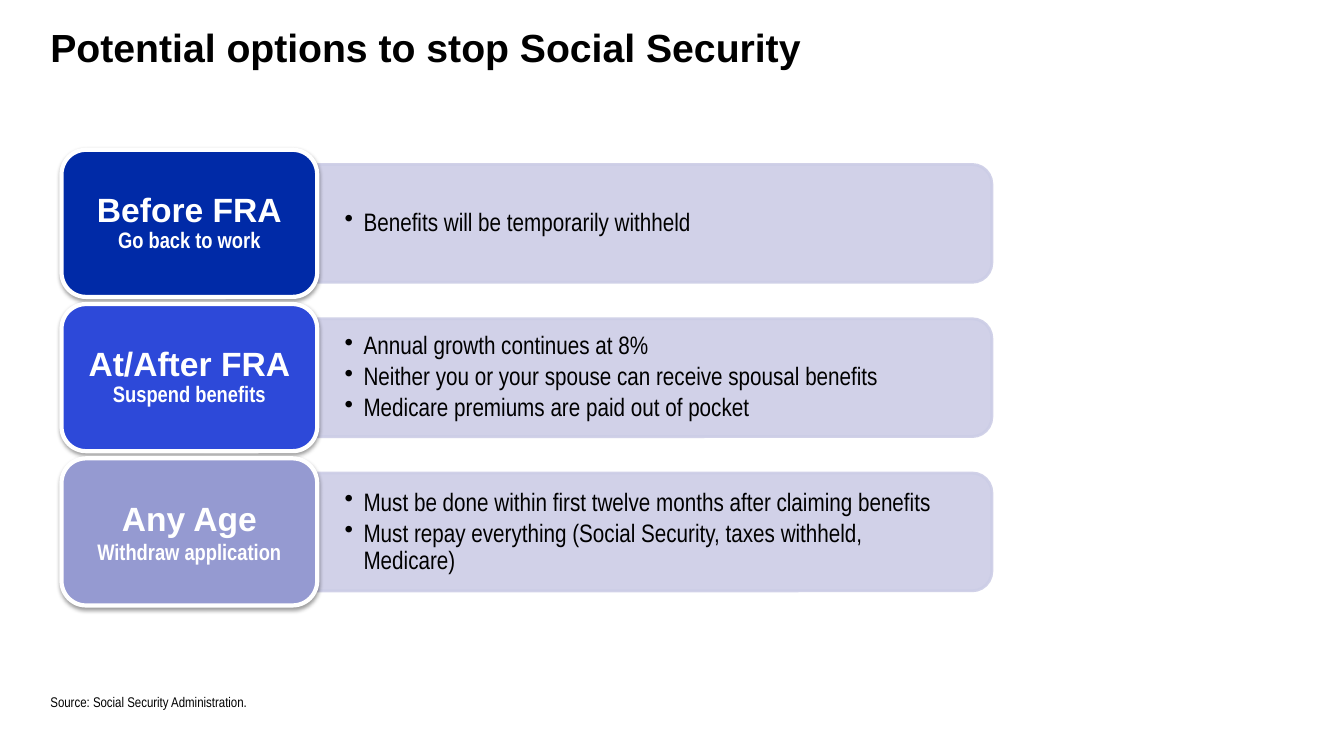
"""Builds a slide on three ways to stop Social Security benefits."""
from lxml import etree
from pptx import Presentation
from pptx import util as u
from pptx.dml.color import RGBColor
from pptx.enum import shapes, text
from pptx.oxml import ns

Pt = u.Pt
HUES = {"ink": "000000", "white": "FFFFFF", "panel": "CCCDE6",
        "navy": "002AA7", "blue": "2D49D9", "lilac": "959AD1"}
HEAD = {"size": Pt(24), "name": "Arial", "bold": True}
SUB = {"size": Pt(16), "name": "Arial Narrow", "bold": True}
ITEM = {"size": Pt(18), "name": "Arial Narrow"}
NOTE = {"size": Pt(10), "name": "Arial Narrow"}
TITLE = {"size": Pt(28), "name": "Arial", "bold": True}
LEFT, MID = text.PP_ALIGN.LEFT, text.PP_ALIGN.CENTER
STEP = 110.2
ROWS = [
    ("navy", "Before FRA", "Go back to work", 0.9,
     ["Benefits will be temporarily withheld"]),
    ("blue", "At/After FRA", "Suspend benefits", 0.9,
     ["Annual growth continues at 8%",
      "Neither you or your spouse can receive spousal benefits",
      "Medicare premiums are paid out of pocket"]),
    ("lilac", "Any Age", "Withdraw application", 1.0,
     ["Must be done within first twelve months after claiming benefits",
      "Must repay everything (Social Security, taxes withheld, Medicare)"]),
]


def rgb(hue):
    """Returns the colour of a named hue."""
    return RGBColor.from_string(HUES[hue])


def put(item, form):
    """Sets each attribute in a dict of format values."""
    for key, val in form.items():
        setattr(item, key, val)


def sub(node, tag, **atts):
    """Adds a drawing element under a node."""
    return etree.SubElement(node, ns.qn("a:" + tag), atts)


def write(para, words, form, hue="ink"):
    """Adds a styled run to a paragraph."""
    run = para.add_run()
    run.text = words
    put(run.font, form)
    run.font.color.rgb = rgb(hue)


def frame(shape, side, edge, anchor):
    """Sets the insets, wrap and anchor of a shape's text."""
    put(shape.text_frame, {
        "word_wrap": True, "vertical_anchor": anchor,
        "margin_left": Pt(side), "margin_right": Pt(side),
        "margin_top": Pt(edge), "margin_bottom": Pt(edge)})
    return shape.text_frame


def block(slide, kind, box, hue, edge, width):
    """Adds a filled and outlined shape without a shadow."""
    shape = slide.shapes.add_shape(kind, *map(Pt, box))
    shape.shadow.inherit = False
    shape.fill.solid()
    shape.fill.fore_color.rgb = rgb(hue)
    shape.line.color.rgb = rgb(edge)
    shape.line.width = Pt(width)
    return shape


def fade(node, share):
    """Sets the opacity of each colour under a node, in percent."""
    for clr in node.iter(ns.qn("a:srgbClr")):
        sub(clr, "alpha", val=str(share * 1000))


def panel(slide, mid, items):
    """Adds a panel, rounded on the right, with its bullet list."""
    left, wide, high = 226.8, 481.7, 84.2
    box = (left + (wide - high) / 2, mid - wide / 2, high, wide)
    kind = shapes.MSO_SHAPE.ROUND_2_SAME_RECTANGLE
    shape = block(slide, kind, box, "panel", "panel", 2)
    shape.rotation = 90
    fade(shape._element.spPr, 90)
    area = slide.shapes.add_textbox(Pt(left), Pt(mid - 38), Pt(478), Pt(76))
    body = frame(area, 19.4, 10, text.MSO_ANCHOR.MIDDLE)
    for num, words in enumerate(items):
        para = body.add_paragraph() if num else body.paragraphs[0]
        props = para._p.get_or_add_pPr()
        props.set("marL", str(Pt(13.5)))
        props.set("indent", str(Pt(-13.5)))
        sub(props, "buChar", char="•")
        put(para, {"level": 1, "line_spacing": 0.9, "space_after": Pt(2.7)})
        write(para, words, ITEM)


def card(slide, mid, hue, head, tail, gap):
    """Adds a rounded card with a heading, a second line and a shadow."""
    box = (43.9, mid - 52.6, 182.7, 105.1)
    kind = shapes.MSO_SHAPE.ROUNDED_RECTANGLE
    shape = block(slide, kind, box, hue, "white", 3)
    glow = shape._element.spPr.find(ns.qn("a:effectLst"))
    cast = sub(glow, "outerShdw", blurRad=str(Pt(3.1)), dist=str(Pt(1.6)),
               dir="5400000", rotWithShape="0")
    sub(cast, "srgbClr", val=HUES["ink"])
    fade(glow, 38)
    para = frame(shape, 5, 5, text.MSO_ANCHOR.MIDDLE).paragraphs[0]
    put(para, {"alignment": MID, "line_spacing": gap, "space_after": Pt(7)})
    write(para, head, HEAD, "white")
    para.add_line_break()
    write(para, tail, SUB, "white")


def label(shape, box, words, form, anchor):
    """Places a shape and fills it with one left-aligned line."""
    put(shape, dict(zip(("left", "top", "width", "height"), map(Pt, box))))
    para = frame(shape, 0, 0, anchor).paragraphs[0]
    para.alignment = LEFT
    write(para, words, form)


def main():
    """Builds and saves the slide."""
    deck = Presentation()
    put(deck, {"slide_width": Pt(960), "slide_height": Pt(540)})
    slide = deck.slides.add_slide(deck.slide_layouts[5])
    label(slide.shapes.title, (36, 16.6, 740, 33.8),
          "Potential options to stop Social Security", TITLE,
          text.MSO_ANCHOR.TOP)
    for num, (hue, head, tail, gap, items) in enumerate(ROWS):
        mid = 159.6 + num * STEP
        panel(slide, mid, items)
        card(slide, mid, hue, head, tail, gap)
    note = slide.shapes.add_textbox(0, 0, 0, 0)
    label(note, (36, 465, 888, 42.5),
          "Source: Social Security Administration.", NOTE,
          text.MSO_ANCHOR.BOTTOM)
    note.text_frame.paragraphs[0].space_after = Pt(1.5)
    deck.save("out.pptx")


if __name__ == "__main__":
    main()
